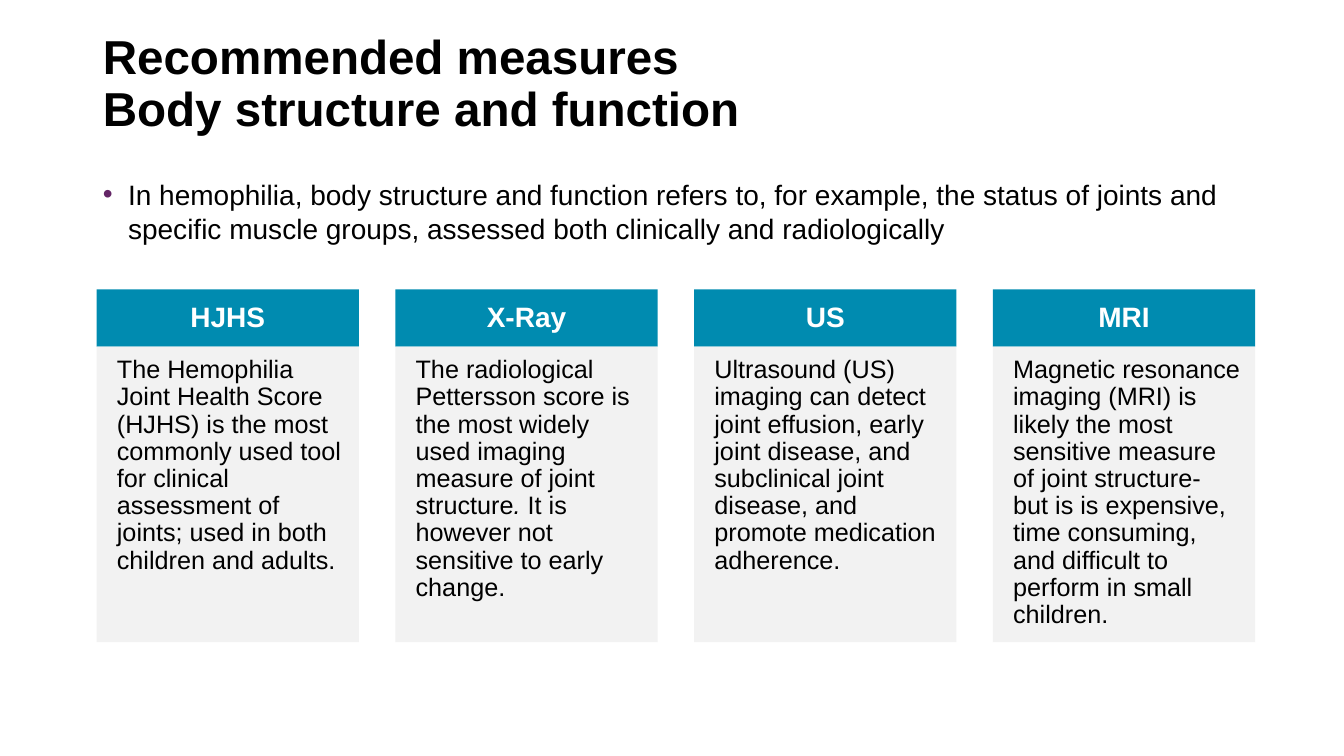
from dataclasses import dataclass

from lxml import etree
from pptx import Presentation
from pptx.dml.color import RGBColor
from pptx.enum.shapes import MSO_SHAPE
from pptx.enum.text import MSO_ANCHOR, MSO_AUTO_SIZE, PP_ALIGN
from pptx.oxml.ns import qn
from pptx.util import Inches, Pt

RECTANGLE = MSO_SHAPE.RECTANGLE
TOP, MIDDLE = MSO_ANCHOR.TOP, MSO_ANCHOR.MIDDLE
LEFT, CENTER = PP_ALIGN.LEFT, PP_ALIGN.CENTER
NO_AUTOFIT = MSO_AUTO_SIZE.NONE

FONT = "Arial"
COLORS = {
    "text": "000000",
    "bullet": "642566",
    "header": "008BB0",
    "header_text": "FFFFFF",
    "panel": "F2F2F2",
}

# Card grid, in inches
CARD_LEFT, CARD_TOP = 0.96, 2.87
CARD_WIDTH, CARD_PITCH = 2.6, 2.963
HEADER_HEIGHT, PANEL_HEIGHT = 0.57, 2.93


@dataclass
class Piece:
    text: str
    italic: bool = False


@dataclass
class Measure:
    name: str
    description: list[Piece]


MEASURES = [
    Measure("HJHS", [Piece(
        "The Hemophilia Joint Health Score (HJHS) is the most commonly used tool "
        "for clinical assessment of joints; used in both children and adults.")]),
    Measure("X-Ray", [
        Piece("The radiological Pettersson score is the most widely used imaging "
              "measure of joint structure"),
        Piece(". ", italic=True),
        Piece("It is however not sensitive to early change.")]),
    Measure("US", [Piece(
        "Ultrasound (US) imaging can detect joint effusion, early joint disease, "
        "and subclinical joint disease, and promote medication adherence.")]),
    Measure("MRI", [Piece(
        "Magnetic resonance imaging (MRI) is likely the most sensitive measure of "
        "joint structure- but is is expensive, time consuming, and difficult to "
        "perform in small children.")]),
]


def rgb(name: str) -> RGBColor:
    return RGBColor.from_string(COLORS[name])


def write(shape, pieces: list[Piece], *, size: float, color: str = "text",
          bold: bool = False, align=LEFT, anchor=TOP, line_spacing: float = 1.0,
          insets: tuple = (0.1, 0.05, 0.1, 0.05), bullet: bool = False) -> None:
    """Fill a shape with one formatted paragraph; newlines become line breaks."""
    frame = shape.text_frame
    frame.word_wrap = True
    frame.auto_size = NO_AUTOFIT
    frame.vertical_anchor = anchor
    (frame.margin_left, frame.margin_top,
     frame.margin_right, frame.margin_bottom) = map(Inches, insets)
    paragraph = frame.paragraphs[0]
    paragraph.alignment = align
    paragraph.line_spacing = line_spacing
    paragraph.space_before = Pt(0)
    if bullet:
        add_bullet(paragraph)
    for piece in pieces:
        for index, line in enumerate(piece.text.split("\n")):
            if index:
                paragraph.add_line_break()
            run = paragraph.add_run()
            run.text = line
            run.font.name = FONT
            run.font.size = Pt(size)
            run.font.bold = bold
            run.font.italic = piece.italic
            run.font.color.rgb = rgb(color)


def add_bullet(paragraph) -> None:
    properties = paragraph._p.get_or_add_pPr()
    properties.set("marL", str(Inches(0.25)))
    properties.set("indent", str(Inches(-0.25)))
    bullet_color = etree.SubElement(properties, qn("a:buClr"))
    etree.SubElement(bullet_color, qn("a:srgbClr"), val=COLORS["bullet"])
    etree.SubElement(properties, qn("a:buFont"), typeface=FONT)
    etree.SubElement(properties, qn("a:buChar"), char="•")


def place(shape, left: float, top: float, width: float, height: float) -> None:
    shape.left, shape.top = Inches(left), Inches(top)
    shape.width, shape.height = Inches(width), Inches(height)


def add_block(slide, left: float, top: float, height: float, fill: str):
    block = slide.shapes.add_shape(
        RECTANGLE, Inches(left), Inches(top), Inches(CARD_WIDTH), Inches(height))
    block.shadow.inherit = False
    block.fill.solid()
    block.fill.fore_color.rgb = rgb(fill)
    block.line.fill.background()
    return block


def add_card(slide, measure: Measure, left: float) -> None:
    header = add_block(slide, left, CARD_TOP, HEADER_HEIGHT, "header")
    write(header, [Piece(measure.name)], size=20, color="header_text", bold=True,
          align=CENTER, anchor=MIDDLE, line_spacing=0.9,
          insets=(0.19, 0.11, 0.19, 0.11))
    panel = add_block(slide, left, CARD_TOP + HEADER_HEIGHT, PANEL_HEIGHT, "panel")
    write(panel, measure.description, size=18, line_spacing=0.9,
          insets=(0.2, 0.1, 0.14, 0.16))


def main() -> None:
    presentation = Presentation()
    presentation.slide_width = Inches(13.33)
    presentation.slide_height = Inches(7.5)
    slide = presentation.slides.add_slide(presentation.slide_layouts[1])

    # Title and introduction
    title, introduction = slide.shapes.title, slide.placeholders[1]
    place(title, 0.92, 0.25, 11.5, 1.19)
    write(title, [Piece("Recommended measures \nBody structure and function")],
          size=34, bold=True, anchor=MIDDLE, line_spacing=0.9)
    place(introduction, 0.92, 1.71, 11.5, 1.19)
    write(introduction, [Piece(
        "In hemophilia, body structure and function refers to, for example, the "
        "status of joints and specific muscle groups, assessed both clinically "
        "and radiologically")], size=20, bullet=True)

    # One card per measure
    for column, measure in enumerate(MEASURES):
        add_card(slide, measure, CARD_LEFT + column * CARD_PITCH)

    presentation.save("out.pptx")


if __name__ == "__main__":
    main()
